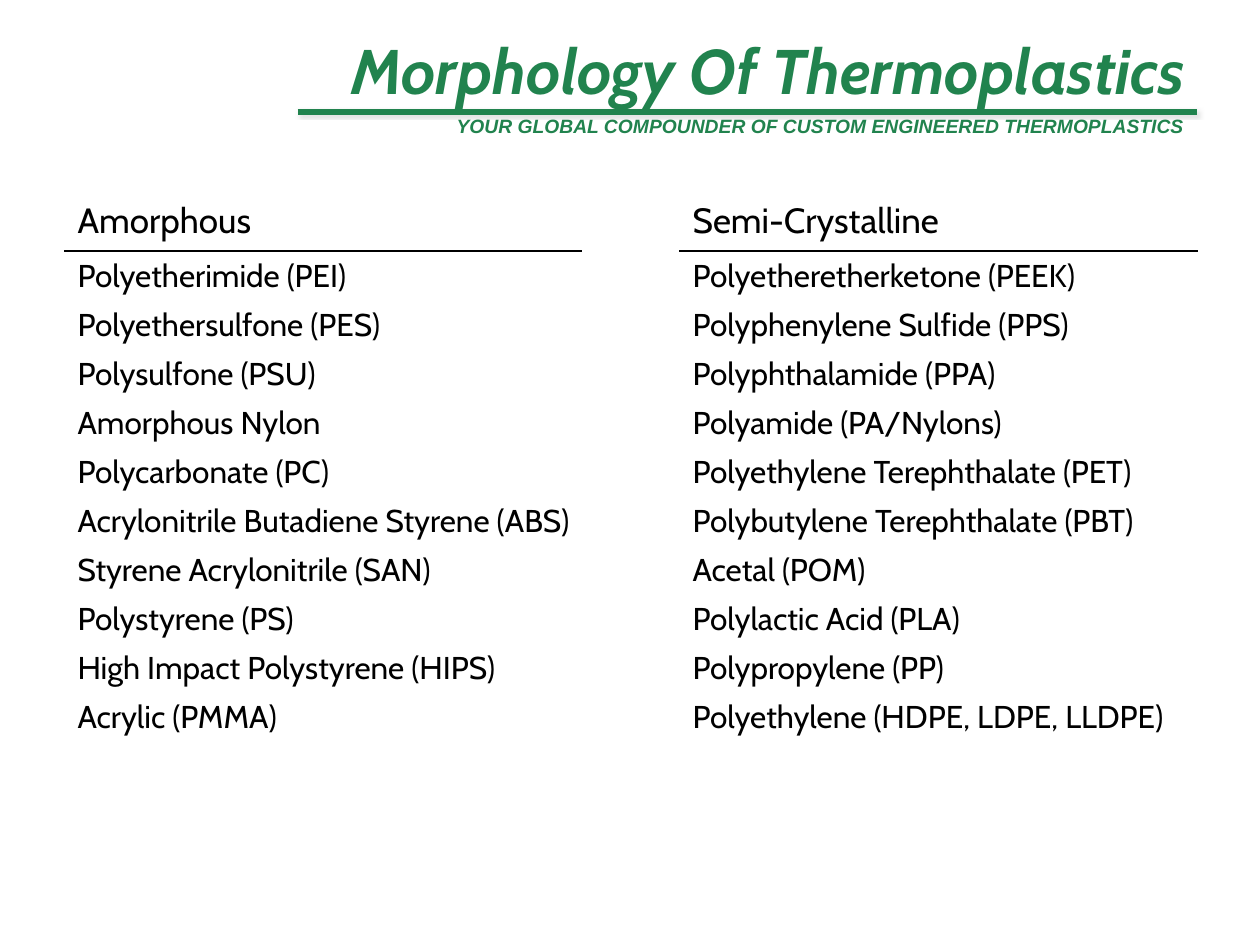
"""Build the slide comparing amorphous and semi-crystalline thermoplastics."""
from lxml import etree
from pptx import Presentation
from pptx import util as u
from pptx.dml.color import RGBColor
from pptx.enum import shapes, text
from pptx.oxml import parse_xml
from pptx.oxml.ns import nsdecls, qn

PX = 914400 / 126
GREEN = RGBColor(0x21, 0x83, 0x4E)
BLACK = RGBColor(0, 0, 0)
RULE_LEFT, RULE_RIGHT, RULE_TOP = 298, 1197, 112

COLUMNS = {
    0: ("Amorphous", [
        "Polyetherimide (PEI)", "Polyethersulfone (PES)", "Polysulfone (PSU)",
        "Amorphous Nylon", "Polycarbonate (PC)",
        "Acrylonitrile Butadiene Styrene (ABS)", "Styrene Acrylonitrile (SAN)",
        "Polystyrene (PS)", "High Impact Polystyrene (HIPS)", "Acrylic (PMMA)",
    ]),
    2: ("Semi-Crystalline", [
        "Polyetheretherketone (PEEK)", "Polyphenylene Sulfide (PPS)",
        "Polyphthalamide (PPA)", "Polyamide (PA/Nylons)",
        "Polyethylene Terephthalate (PET)", "Polybutylene Terephthalate (PBT)",
        "Acetal (POM)", "Polylactic Acid (PLA)", "Polypropylene (PP)",
        "Polyethylene (HDPE, LDPE, LLDPE)",
    ]),
}


def px(*lengths):
    return [u.Emu(round(length * PX)) for length in lengths]


def add_run(paragraph, words, font, size, color, strong=False):
    run = paragraph.add_run()
    run.text = words
    run.font.name = font
    run.font.size = u.Pt(size)
    run.font.color.rgb = color
    run.font.bold = run.font.italic = strong


presentation = Presentation()
presentation.slide_width, presentation.slide_height = px(1260, 945)
slide = presentation.slides.add_slide(presentation.slide_layouts[6])

for shadowed in (False, True):
    rule = slide.shapes.add_connector(
        shapes.MSO_CONNECTOR.STRAIGHT, *px(RULE_LEFT, RULE_TOP, RULE_RIGHT, RULE_TOP))
    rule.line.color.rgb = GREEN
    rule.line.width = u.Pt(3)
    effects = etree.SubElement(rule._element.spPr, qn("a:effectLst"))
    if shadowed:
        effects.append(parse_xml(
            f'<a:outerShdw {nsdecls("a")} blurRad="25400" dist="12700" dir="2700000">'
            '<a:srgbClr val="808080"><a:alpha val="25000"/></a:srgbClr></a:outerShdw>'))

for words, top, height, font, size, spacing, anchor in (
    ("YOUR GLOBAL COMPOUNDER OF CUSTOM ENGINEERED THERMOPLASTICS",
     108, 36, "Arial", 11, 1.0, text.MSO_ANCHOR.TOP),
    ("Morphology Of Thermoplastics",
     0, 113, "Cabin", 36, 0.8, text.MSO_ANCHOR.BOTTOM),
):
    box = slide.shapes.add_textbox(*px(RULE_LEFT, top, RULE_RIGHT - RULE_LEFT, height))
    frame = box.text_frame
    frame.word_wrap = True
    frame.vertical_anchor = anchor
    paragraph = frame.paragraphs[0]
    paragraph.alignment = text.PP_ALIGN.RIGHT
    paragraph.line_spacing = spacing
    add_run(paragraph, words, font, size, GREEN, strong=True)

table = slide.shapes.add_table(3, 3, *px(65, 193, 1132, 752)).table
table.first_row = table.horz_banding = False
for column, width in zip(table.columns, px(518, 97, 517)):
    column.width = width
for row, height in zip(table.rows, px(58, 567, 127)):
    row.height = height
for cell in table.iter_cells():
    cell.fill.background()
table.cell(2, 0).merge(table.cell(2, 2))

for column, (heading, polymers) in COLUMNS.items():
    header, body = table.cell(0, column), table.cell(1, column)
    add_run(header.text_frame.paragraphs[0], heading, "Cabin", 20, BLACK)
    for index, polymer in enumerate(polymers):
        frame = body.text_frame
        paragraph = frame.add_paragraph() if index else frame.paragraphs[0]
        paragraph.space_after = u.Pt(6)
        add_run(paragraph, polymer, "Cabin", 18, BLACK)
    for cell, side in ((header, "lnB"), (body, "lnT")):
        cell._tc.get_or_add_tcPr().insert(0, parse_xml(
            f'<a:{side} {nsdecls("a")} w="12700"><a:solidFill>'
            f'<a:srgbClr val="{BLACK}"/></a:solidFill></a:{side}>'))

presentation.save("out.pptx")
